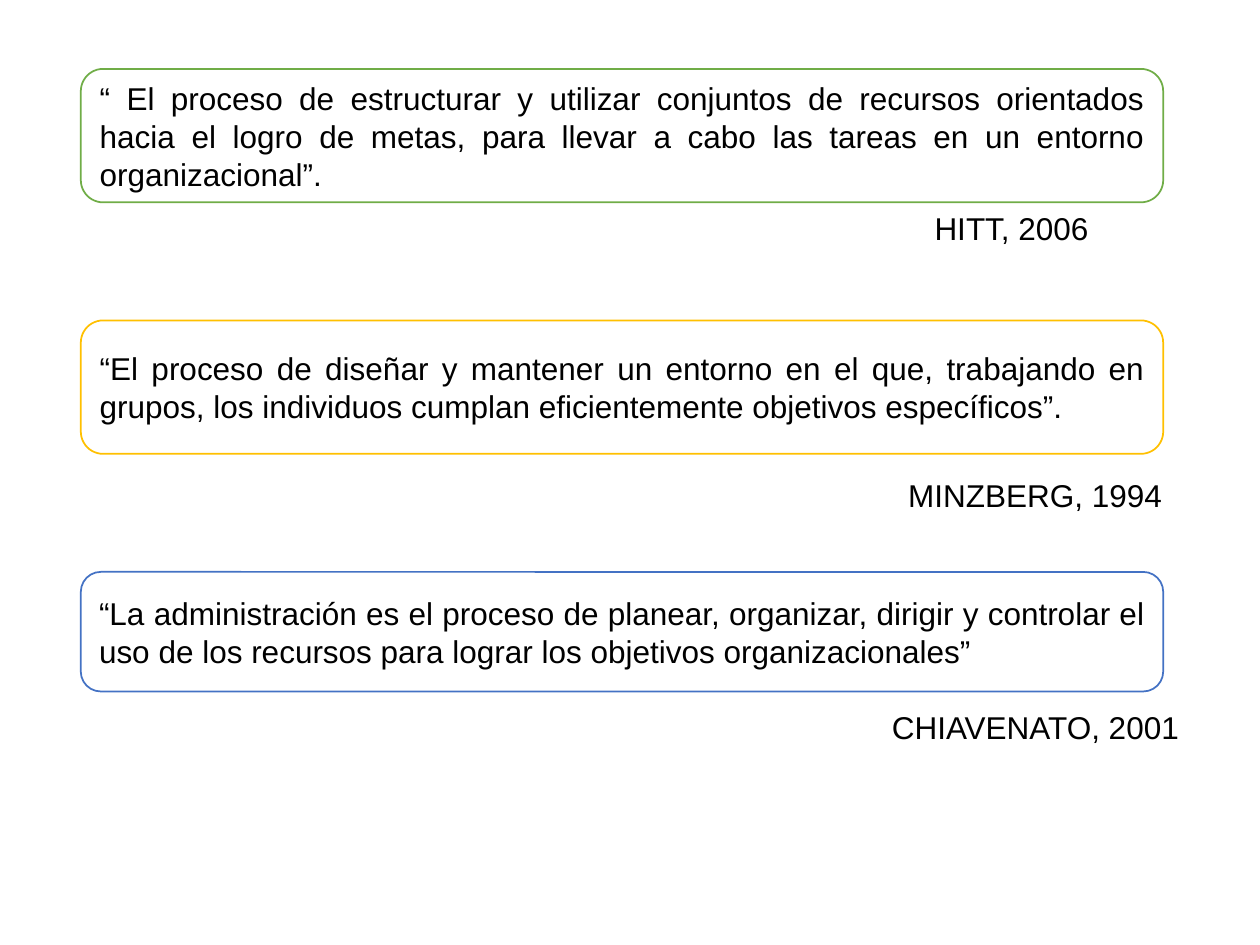
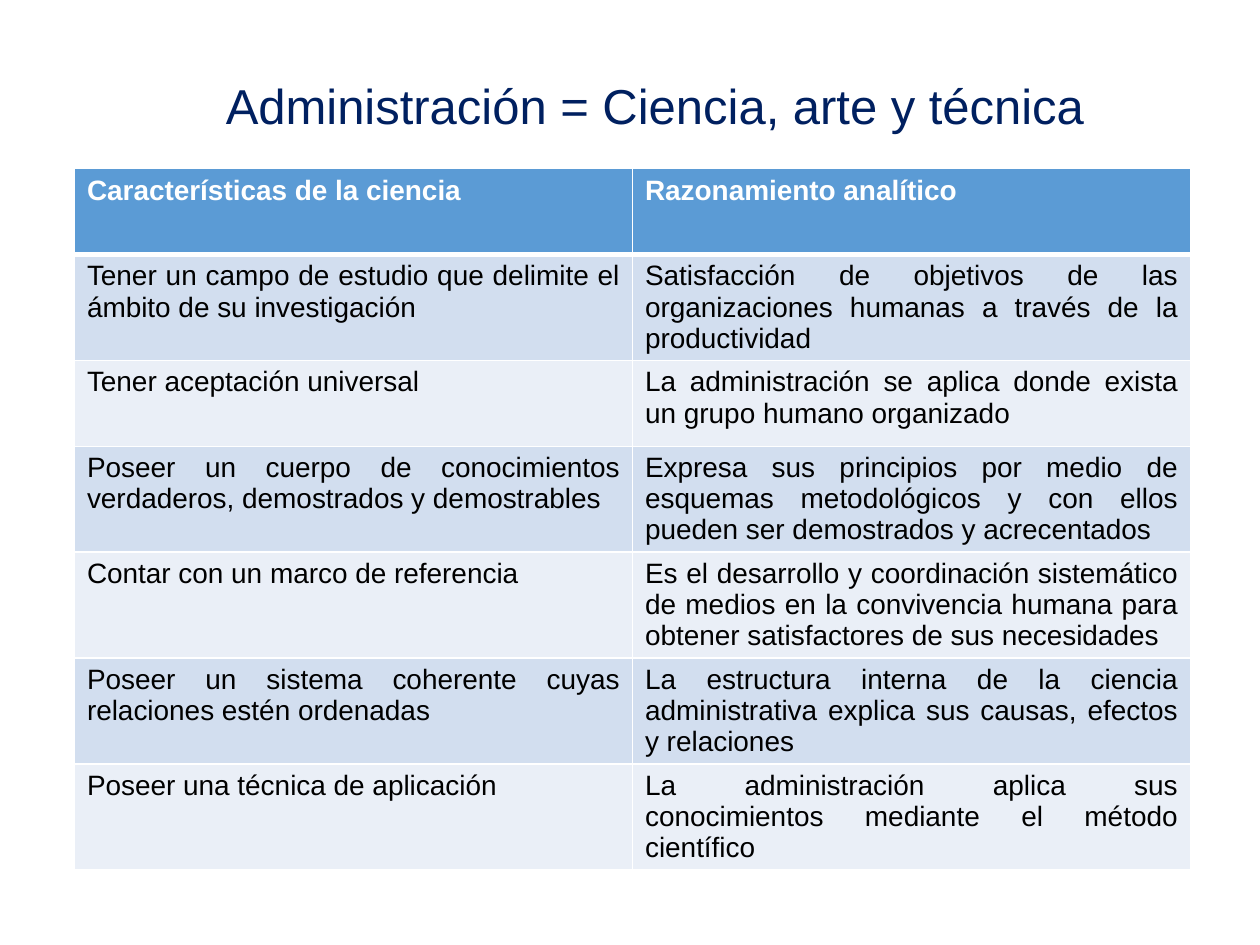
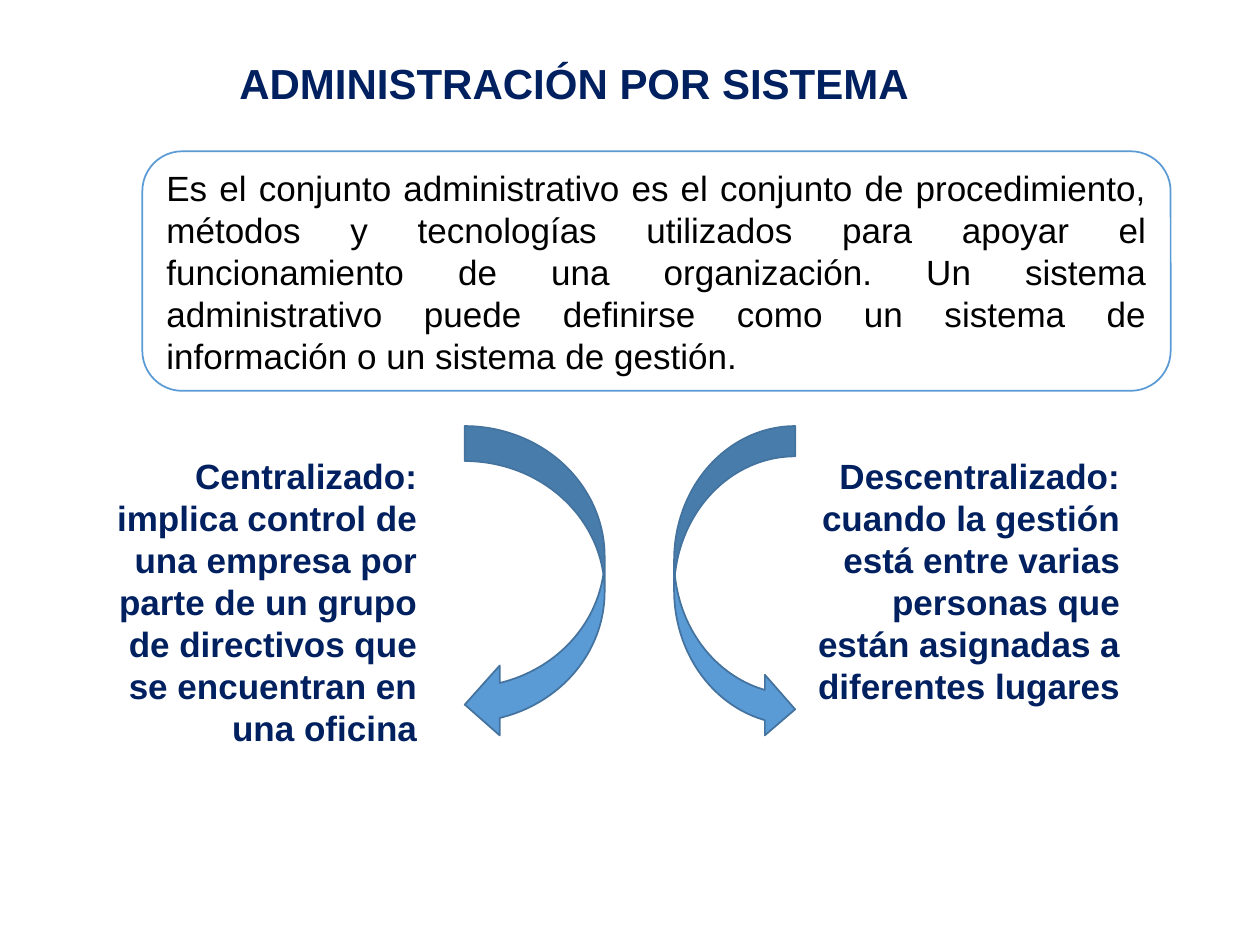
from lxml import etree
from pptx import Presentation
from pptx.dml.color import RGBColor
from pptx.enum.shapes import MSO_SHAPE
from pptx.enum.text import MSO_ANCHOR, MSO_AUTO_SIZE, PP_ALIGN
from pptx.oxml.ns import qn
from pptx.util import Cm, Pt

COLORS = {
    "text": "000000",
    "navy": "002060",
    "white": "FFFFFF",
    "green": "70AD47",
    "gold": "FFC000",
    "royal": "4472C4",
    "blue": "5B9BD5",
    "arrow_edge": "43739E",
    "band_dark": "D2DEEF",
    "band_light": "EAEFF7",
}
RGB = {name: RGBColor.from_string(code) for name, code in COLORS.items()}
FONT = "Arial"


def write_text(frame, text, size, color, align=PP_ALIGN.LEFT, bold=False, anchor=MSO_ANCHOR.TOP):
    frame.vertical_anchor = anchor
    paragraph = frame.paragraphs[0]
    paragraph.alignment = align
    run = paragraph.add_run()
    run.text = text
    run.font.name = FONT
    run.font.size = Pt(size)
    run.font.bold = bold
    run.font.color.rgb = RGB[color]


def add_outlined(slide, kind, bounds, fill, line):
    shape = slide.shapes.add_shape(kind, *map(Cm, bounds))
    shape.shadow.inherit = False
    shape.fill.solid()
    shape.fill.fore_color.rgb = RGB[fill]
    shape.line.color.rgb = RGB[line]
    shape.line.width = Pt(1)
    return shape


prs = Presentation()
prs.slide_width = Cm(25.4)
prs.slide_height = Cm(19.05)
title_only, blank = prs.slide_layouts[5], prs.slide_layouts[6]

definitions = prs.slides.add_slide(blank)
quotes = [
    ("“ El proceso de estructurar y utilizar conjuntos de recursos orientados hacia el logro de metas, "
     "para llevar a cabo las tareas en un entorno organizacional”.",
     "green", 2.69, "HITT, 2006", (18.59, 4.09, 3.66, 1.02)),
    ("“El proceso de diseñar y mantener un entorno en el que, trabajando en grupos, los individuos "
     "cumplan eficientemente objetivos específicos”.",
     "gold", 2.69, "MINZBERG, 1994", (18.06, 9.47, 5.69, 1.02)),
    ("“La administración es el proceso de planear, organizar, dirigir y controlar el uso de los recursos "
     "para lograr los objetivos organizacionales”",
     "royal", 2.41, "CHIAVENATO, 2001", (17.73, 14.15, 6.35, 1.02)),
]
for index, (quote, outline, height, author, author_bounds) in enumerate(quotes):
    quote_box = add_outlined(definitions, MSO_SHAPE.ROUNDED_RECTANGLE,
                             (1.63, 1.39 + 5.07 * index, 21.82, height), "white", outline)
    write_text(quote_box.text_frame, quote, 18, "text", PP_ALIGN.JUSTIFY, anchor=MSO_ANCHOR.MIDDLE)
    author_frame = definitions.shapes.add_textbox(*map(Cm, author_bounds)).text_frame
    author_frame.word_wrap = False
    author_frame.auto_size = MSO_AUTO_SIZE.SHAPE_TO_FIT_TEXT
    write_text(author_frame, author, 18, "text")

science = prs.slides.add_slide(title_only)
system = prs.slides.add_slide(title_only)
headings = [
    (science, "Administración = Ciencia, arte y técnica", (3.18, 1.4, 20.04, 1.45), 28, PP_ALIGN.CENTER, False),
    (system, "ADMINISTRACIÓN POR SISTEMA", (4.57, 1.04, 20.8, 1.27), 24, PP_ALIGN.LEFT, True),
]
for slide, heading, bounds, size, align, bold in headings:
    title = slide.shapes.title
    title.left, title.top, title.width, title.height = map(Cm, bounds)
    title.text_frame.auto_size = MSO_AUTO_SIZE.NONE
    write_text(title.text_frame, heading, size, "navy", align, bold)

features = [
    ("Características de la ciencia", "Razonamiento analítico"),
    ("Tener un campo de estudio que delimite el ámbito de su investigación",
     "Satisfacción de objetivos de las organizaciones humanas a través de la productividad"),
    ("Tener aceptación universal",
     "La administración se aplica donde exista un grupo humano organizado"),
    ("Poseer un cuerpo de conocimientos verdaderos, demostrados y demostrables",
     "Expresa sus principios por medio de esquemas metodológicos y con ellos pueden ser demostrados "
     "y acrecentados"),
    ("Contar con un marco de referencia",
     "Es el desarrollo y coordinación sistemático de medios en la convivencia humana para obtener "
     "satisfactores de sus necesidades"),
    ("Poseer un sistema coherente cuyas relaciones estén ordenadas",
     "La estructura interna de la ciencia administrativa explica sus causas, efectos y relaciones"),
    ("Poseer una técnica de aplicación",
     "La administración aplica sus conocimientos mediante el método científico"),
]
features_table = science.shapes.add_table(len(features), 2, Cm(1.5), Cm(3.4), Cm(22.5), Cm(12.11)).table
features_table.horz_banding = False
for column in features_table.columns:
    column.width = Cm(11.25)
for row_index, row_texts in enumerate(features):
    is_header = row_index == 0
    features_table.rows[row_index].height = Cm(1.73)
    band = "blue" if is_header else ("band_dark" if row_index % 2 else "band_light")
    edges = {"lnL": 1, "lnR": 1, "lnT": 3 if row_index == 1 else 1, "lnB": 3 if is_header else 1}
    for column_index, text in enumerate(row_texts):
        cell = features_table.cell(row_index, column_index)
        cell.fill.solid()
        cell.fill.fore_color.rgb = RGB[band]
        write_text(cell.text_frame, text, 16, "white" if is_header else "text", PP_ALIGN.JUSTIFY, is_header)
        properties = cell._tc.get_or_add_tcPr()
        for position, (edge, width) in enumerate(edges.items()):
            border = etree.Element(qn(f"a:{edge}"), w=str(Pt(width)))
            border_fill = etree.SubElement(border, qn("a:solidFill"))
            etree.SubElement(border_fill, qn("a:srgbClr"), val=COLORS["white"])
            properties.insert(position, border)

concept = add_outlined(system, MSO_SHAPE.ROUNDED_RECTANGLE, (2.87, 3.05, 20.73, 4.83), "white", "blue")
write_text(concept.text_frame,
           "Es el conjunto administrativo es el conjunto de procedimiento, métodos y tecnologías utilizados "
           "para apoyar el funcionamiento de una organización. Un sistema administrativo puede definirse "
           "como un sistema de información o un sistema de gestión.",
           20, "text", PP_ALIGN.JUSTIFY, anchor=MSO_ANCHOR.MIDDLE)

branches = [
    (MSO_SHAPE.CURVED_LEFT_ARROW, 9.37, 2.82, 1.88, 6.25,
     "Centralizado: implica control de una empresa por parte de un grupo de directivos que se encuentran "
     "en una oficina"),
    (MSO_SHAPE.CURVED_RIGHT_ARROW, 13.59, 2.44, 16.05, 5.38,
     "Descentralizado: cuando la gestión está entre varias personas que están asignadas a diferentes lugares"),
]
for arrow, arrow_left, arrow_width, text_left, text_height, description in branches:
    add_outlined(system, arrow, (arrow_left, 8.59, arrow_width, 6.32), "blue", "arrow_edge")
    branch_frame = system.shapes.add_textbox(Cm(text_left), Cm(9.04), Cm(6.78), Cm(text_height)).text_frame
    branch_frame.word_wrap = True
    branch_frame.auto_size = MSO_AUTO_SIZE.SHAPE_TO_FIT_TEXT
    write_text(branch_frame, description, 20, "navy", PP_ALIGN.RIGHT, True)

prs.save("out.pptx")
